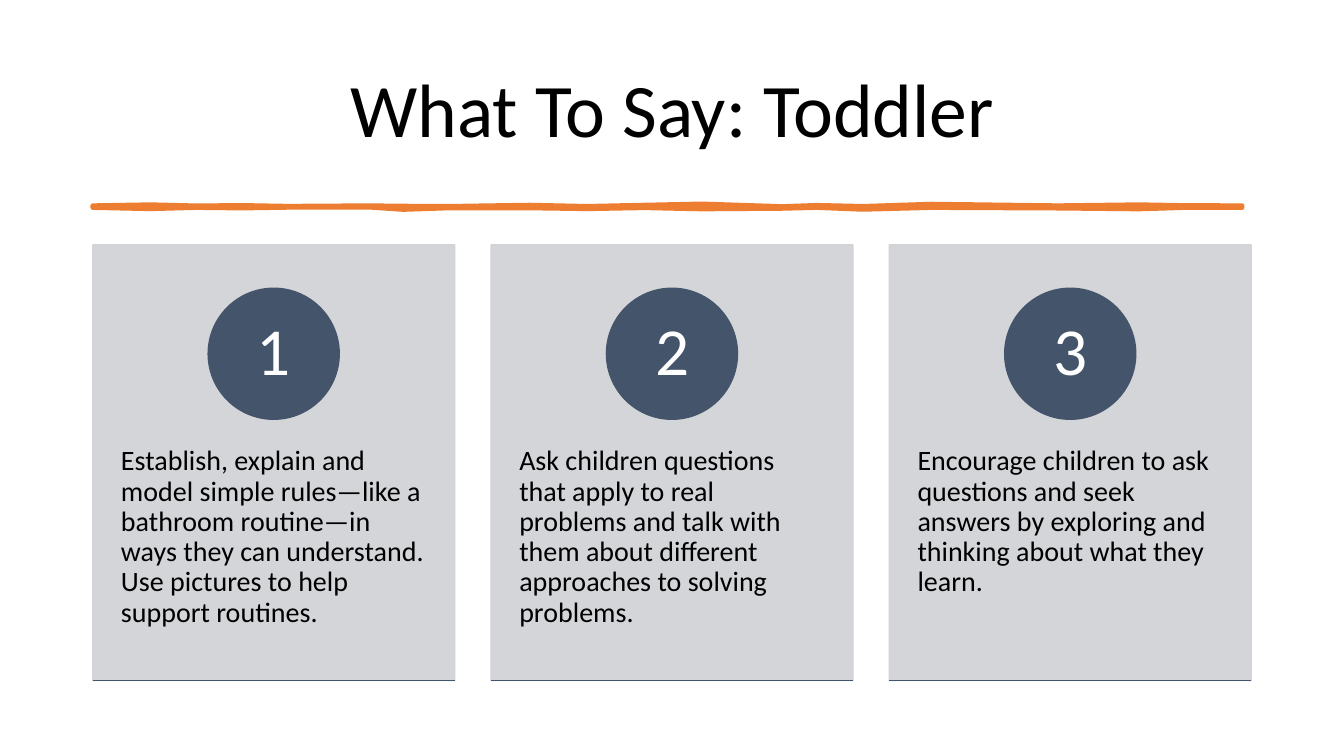
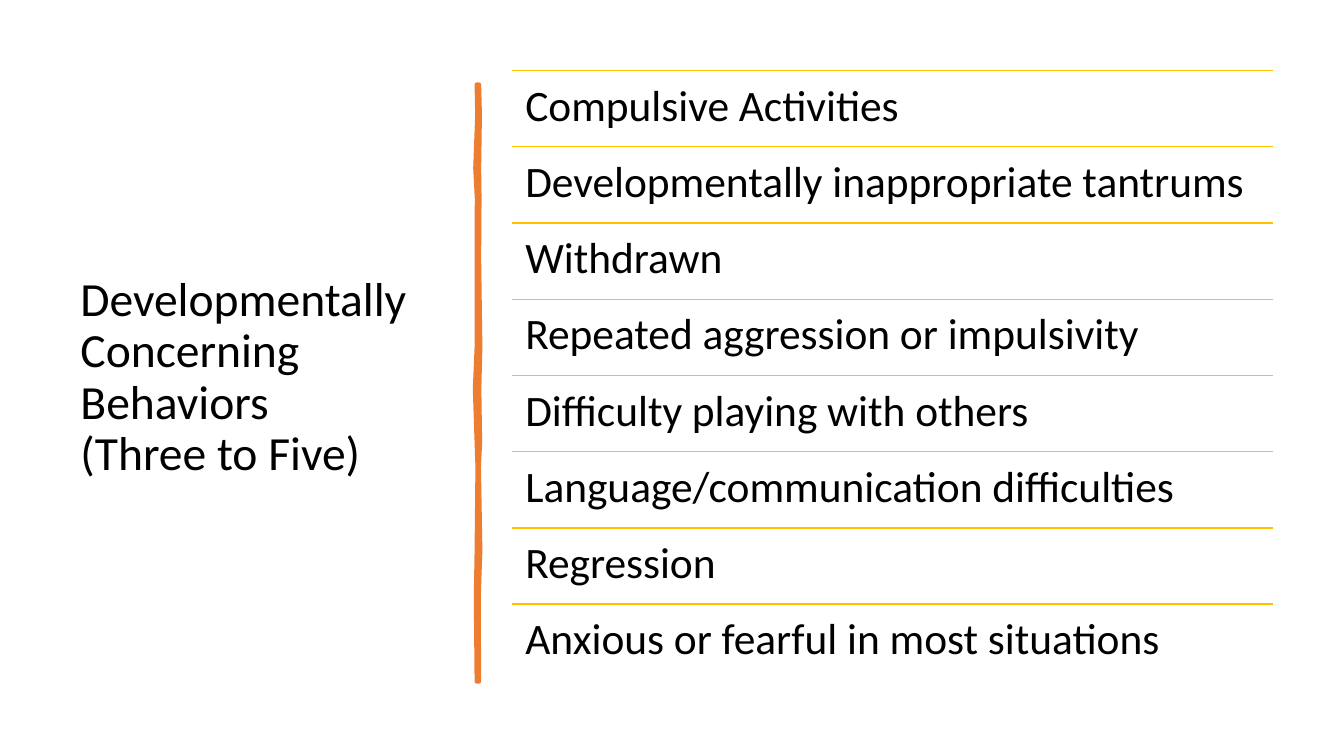
from lxml.etree import SubElement
from pptx import Presentation
from pptx.dml.color import RGBColor
from pptx.enum.shapes import MSO_CONNECTOR as Connector, MSO_SHAPE as Shape
from pptx.enum.text import MSO_ANCHOR as Anchor, PP_ALIGN as Align
from pptx.oxml.ns import qn
from pptx.util import Inches, Pt

FONT = "Calibri"
BLACK, WHITE = "000000", "FFFFFF"
ORANGE, GOLD, NAVY, CARD_GREY = "ED7D31", "FFC000", "44546A", "CFD1D4"
WIDTH, HEIGHT = 13.33, 7.5

CARDS_TITLE = "What To Say: Toddler"
CARDS = [
    "Establish, explain and model simple rules—like a bathroom routine—in ways "
    "they can understand. Use pictures to help support routines.",
    "Ask children questions that apply to real problems and talk with them about "
    "different approaches to solving problems.",
    "Encourage children to ask questions and seek answers by exploring and "
    "thinking about what they learn.",
]
LIST_TITLE = ["Developmentally Concerning Behaviors ", "(Three to Five)"]
BEHAVIORS = [
    "Compulsive Activities",
    "Developmentally inappropriate tantrums",
    "Withdrawn",
    "Repeated aggression or impulsivity",
    "Difficulty playing with others",
    "Language/communication difficulties",
    "Regression",
    "Anxious or fearful in most situations",
]

# Brush strokes: share of the length, then both edges in thousandths of an inch
# from the middle of the stroke.
ACROSS = [
    (0, -10, 10), (0.05, -20, 22), (0.09, -9, 10), (0.13, -13, 15),
    (0.17, -5, 8), (0.24, -10, 6), (0.27, -6, 29), (0.31, -4, 14),
    (0.38, -16, 14), (0.43, -4, 22), (0.48, -16, 12), (0.53, -28, 24),
    (0.6, -2, 18), (0.63, -14, 10), (0.67, -4, 28), (0.73, -26, 10),
    (0.84, -10, 16), (0.91, -20, 24), (0.95, -12, 10), (1, -10, 10),
]
DOWN = [
    (0, -10, 10), (0.05, -4, 18), (0.14, -24, 10), (0.19, -8, 14),
    (0.29, -10, 10), (0.44, -10, 22), (0.51, -28, 12), (0.6, -10, 20),
    (0.64, -2, 8), (0.78, -10, 22), (0.86, -18, 6), (1, -10, 10),
]


def color(value):
    return RGBColor.from_string(value)


def paint(shape, fill, line, width=1, alpha=None):
    shape.shadow.inherit = False
    shape.fill.solid()
    shape.fill.fore_color.rgb = color(fill)
    shape.line.color.rgb = color(line)
    shape.line.width = Pt(width)
    if alpha:
        for hue in shape._element.spPr.iter(qn("a:srgbClr")):
            SubElement(hue, qn("a:alpha"), val=str(alpha * 1000))


def add_text(page, left, top, width, height, lines, size, ink=BLACK,
             align=Align.LEFT, anchor=Anchor.TOP, insets=(0.1, 0.05)):
    box = page.shapes.add_textbox(*map(Inches, (left, top, width, height)))
    frame = box.text_frame
    frame.word_wrap = True
    frame.vertical_anchor = anchor
    frame.margin_left = frame.margin_right = Inches(insets[0])
    frame.margin_top = frame.margin_bottom = Inches(insets[1])
    para = frame.paragraphs[0]
    para.alignment = align
    para.line_spacing = 0.9
    for index, line in enumerate(lines):
        if index:
            para.add_line_break()
        span = para.add_run()
        span.text = line
        span.font.name = FONT
        span.font.size = Pt(size)
        span.font.color.rgb = color(ink)


def add_rule(page, left, top, width, ink):
    rule = page.shapes.add_connector(
        Connector.STRAIGHT, *map(Inches, (left, top, left + width, top)))
    rule.line.color.rgb = color(ink)
    rule.line.width = Pt(1)
    SubElement(rule._element.spPr, qn("a:effectLst"))


def add_brush(page, left, top, length, profile, vertical=False):
    outline = [(at * length * 1000, near) for at, near, _ in profile]
    outline += [(at * length * 1000, far) for at, _, far in reversed(profile)]
    if vertical:
        outline = [(y, x) for x, y in outline]
    outline = [(left * 1000 + x, top * 1000 + y) for x, y in outline]
    builder = page.shapes.build_freeform(*outline[0], scale=Inches(1) / 1000)
    builder.add_line_segments(outline[1:], close=True)
    brush = builder.convert_to_shape()
    paint(brush, ORANGE, ORANGE, 3.25)
    SubElement(brush.line._get_or_add_ln(), qn("a:round"))


def build_cards(page):
    left, top, width, height, gap = 0.92, 2.43, 3.59, 4.32, 0.36
    circle, number = 1.3, 0.92
    add_text(page, left, 0.4, 11.5, 1.45, [CARDS_TITLE], 54,
             align=Align.CENTER, anchor=Anchor.MIDDLE)
    add_brush(page, left, 2.05, 11.4, ACROSS)
    for index, advice in enumerate(CARDS):
        x = left + index * (width + gap)
        card = page.shapes.add_shape(
            Shape.RECTANGLE, *map(Inches, (x, top, width, height)))
        paint(card, CARD_GREY, CARD_GREY, alpha=90)
        add_text(page, x, top + 0.38 * height, width, 0.6 * height, [advice], 20,
                 insets=(0.28, 0.36))
        middle_x, middle_y = x + width / 2, top + height / 4
        badge = page.shapes.add_shape(Shape.OVAL, *map(Inches, (
            middle_x - circle / 2, middle_y - circle / 2, circle, circle)))
        paint(badge, NAVY, NAVY)
        add_text(page, middle_x - number / 2, middle_y - number / 2, number, number,
                 [str(index + 1)], 48, ink=WHITE, align=Align.CENTER,
                 anchor=Anchor.MIDDLE, insets=(0.1, 0.01))
        add_rule(page, x, top + height, width, NAVY)


def build_list(page):
    left, top, width, height = 5.08, 0.7, 7.55, 6.05
    row = height / len(BEHAVIORS)
    add_text(page, 0.7, 0.7, 3.73, 6.1, LIST_TITLE, 34, anchor=Anchor.MIDDLE)
    add_brush(page, 4.74, 0.84, 5.92, DOWN, vertical=True)
    for index, behavior in enumerate(BEHAVIORS):
        y = top + index * row
        add_rule(page, left, y, width, GOLD)
        add_text(page, left, y, width, row, [behavior], 31, insets=(0.13, 0.13))


def main():
    deck = Presentation()
    deck.slide_width, deck.slide_height = Inches(WIDTH), Inches(HEIGHT)
    for build in (build_cards, build_list):
        build(deck.slides.add_slide(deck.slide_layouts[6]))
    deck.save("out.pptx")


if __name__ == "__main__":
    main()
